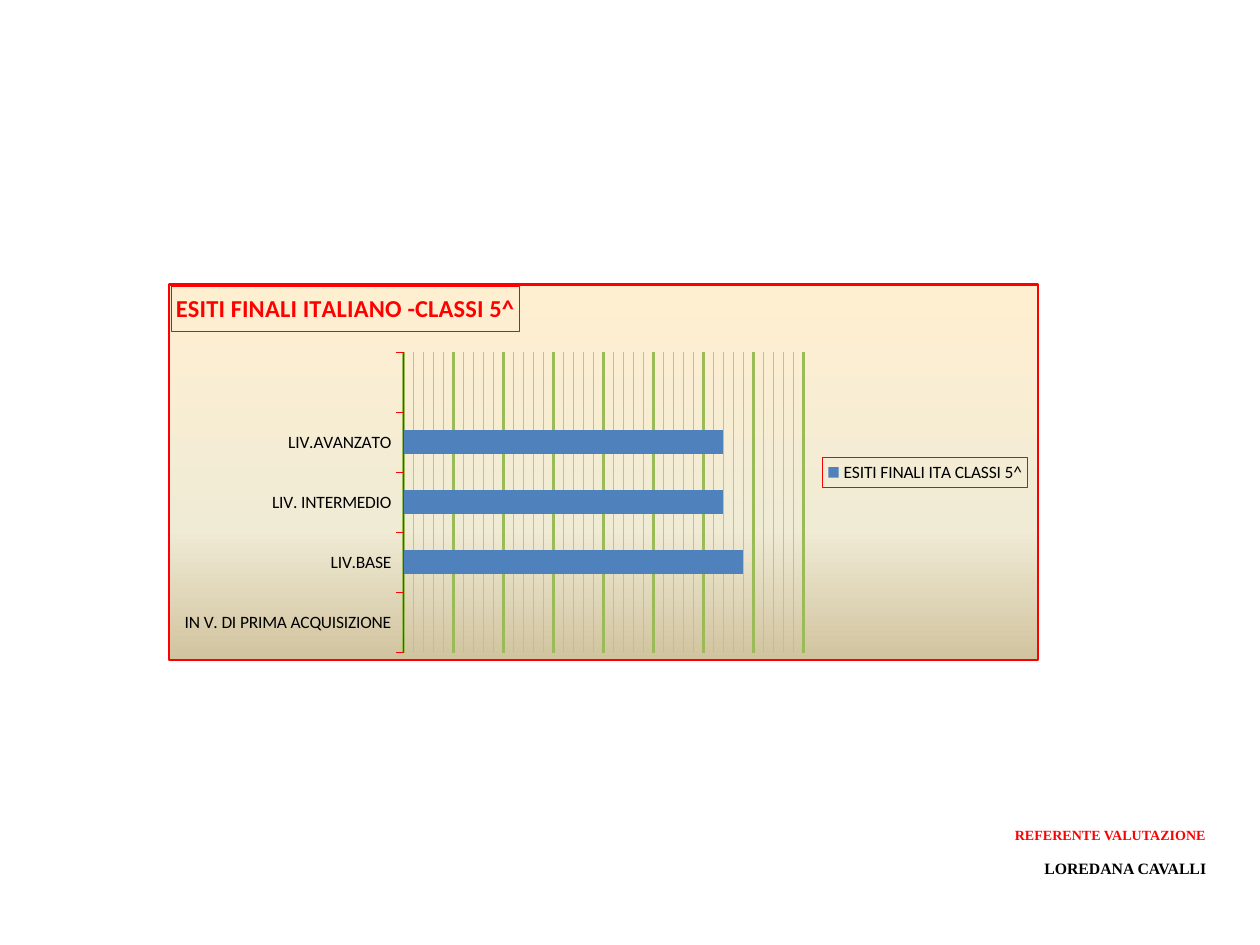
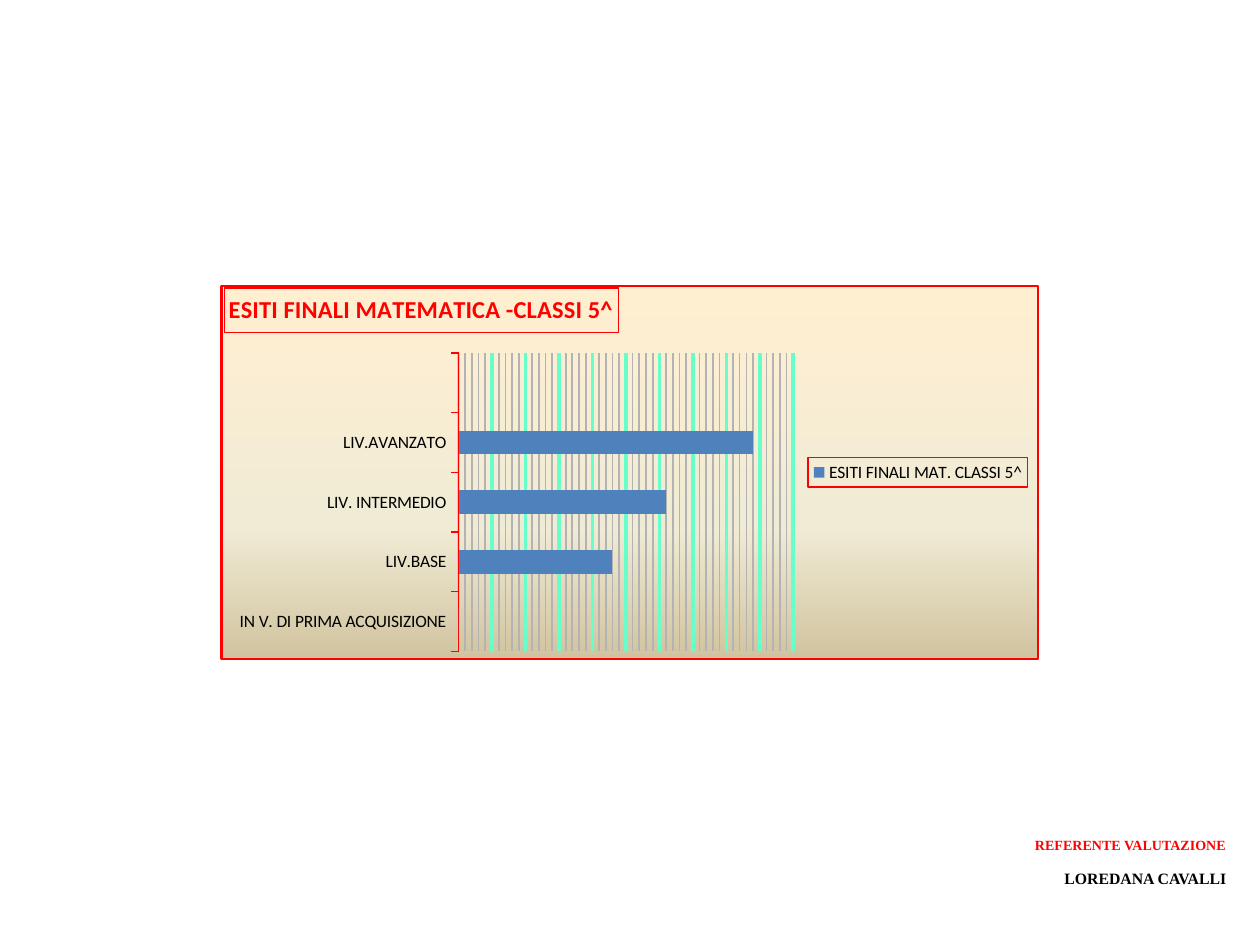
from dataclasses import dataclass
from lxml import etree
from pptx import Presentation
from pptx.chart.data import CategoryChartData
from pptx.dml.color import RGBColor
from pptx.enum.chart import XL_CHART_TYPE, XL_LEGEND_POSITION, XL_TICK_MARK
from pptx.enum.text import MSO_AUTO_SIZE, PP_ALIGN
from pptx.oxml import parse_xml
from pptx.oxml.ns import nsdecls, qn
from pptx.util import Inches, Pt


@dataclass(frozen=True)
class Theme:
    red: str = "FF0000"
    black: str = "000000"
    bar: str = "4F81BD"
    panel_stops: tuple = ((0, "FFEFD1"), (65, "F0EBD5"), (100, "D1C39F"))
    chart_font: str = "Calibri"
    footer_font: str = "Times New Roman"
    title_size: int = 14
    label_size: int = 10
    role_size: int = 8
    name_size: int = 9


THEME = Theme()
LEVELS = ["IN V. DI PRIMA ACQUISIZIONE", "LIV.BASE", "LIV. INTERMEDIO", "LIV.AVANZATO", ""]
FOOTER = [
    ("REFERENTE VALUTAZIONE", THEME.role_size, THEME.red),
    ("LOREDANA CAVALLI", THEME.name_size, THEME.black),
]
RESULTS = [
    dict(title="ESITI FINALI ITALIANO -CLASSI 5^", series="ESITI FINALI ITA CLASSI 5^",
         values=[0, 34, 32, 32, None], top=40, major="9BBB59", minor="C4BD97", minor_width=0.5,
         chart_at=(1.33, 2.25, 6.92, 3), plot_at=(0.27, 0.18, 0.46, 0.8),
         footer_at=(4.67, 6.5, 5, 0.52)),
    dict(title="ESITI FINALI MATEMATICA -CLASSI 5^", series="ESITI FINALI MAT. CLASSI 5^",
         values=[0, 23, 31, 44, None], top=50, major="66FFCC", minor="B3B3B3", minor_width=1,
         chart_at=(1.75, 2.26, 6.5, 2.98), plot_at=(0.29, 0.18, 0.41, 0.8),
         footer_at=(4.83, 6.58, 5, 0.52)),
]


def outline(color, width, fill=""):
    """Shape properties for chart parts that python-pptx cannot format."""
    return parse_xml(
        f'<c:spPr {nsdecls("c", "a")}>{fill}<a:ln w="{Pt(width)}"><a:solidFill>'
        f'<a:srgbClr val="{color}"/></a:solidFill></a:ln></c:spPr>')


def place(part, index, **settings):
    """Give a chart part a manual layout, in fractions of the chart."""
    for old in part.findall(qn("c:layout")):
        part.remove(old)
    layout = etree.Element(qn("c:layout"))
    manual = etree.SubElement(layout, qn("c:manualLayout"))
    for key, value in settings.items():
        etree.SubElement(manual, qn(f"c:{key}")).set("val", str(value))
    part.insert(index, layout)


panel_stops = "".join(f'<a:gs pos="{pos * 1000}"><a:srgbClr val="{color}"/></a:gs>'
                      for pos, color in THEME.panel_stops)
panel_fill = (f'<a:gradFill><a:gsLst>{panel_stops}</a:gsLst>'
              '<a:lin ang="5400000" scaled="0"/></a:gradFill>')

prs = Presentation()
prs.slide_width, prs.slide_height = Inches(10), Inches(7.5)

for result in RESULTS:
    slide = prs.slides.add_slide(prs.slide_layouts[6])

    # Bar chart of the levels
    data = CategoryChartData()
    data.categories = LEVELS
    data.add_series(result["series"], result["values"])
    chart = slide.shapes.add_chart(
        XL_CHART_TYPE.BAR_CLUSTERED, *map(Inches, result["chart_at"]), data).chart
    chart.font.name = THEME.chart_font
    chart.font.size = Pt(THEME.label_size)
    chart.font.color.rgb = RGBColor.from_string(THEME.black)
    chart_root = chart.element.find(qn("c:chart"))

    bars = chart.plots[0]
    bars.gap_width = 150
    bars.vary_by_categories = False
    bars.series[0].format.fill.solid()
    bars.series[0].format.fill.fore_color.rgb = RGBColor.from_string(THEME.bar)

    # Framed title in the top left corner
    heading = chart.chart_title
    heading.text_frame.text = result["title"]
    heading_font = heading.text_frame.paragraphs[0].runs[0].font
    heading_font.name = THEME.chart_font
    heading_font.size = Pt(THEME.title_size)
    heading_font.bold = True
    heading_font.color.rgb = RGBColor.from_string(THEME.red)
    heading.format.line.color.rgb = RGBColor.from_string(THEME.red)
    heading.format.line.width = Pt(0.75)
    place(chart_root.find(qn("c:title")), 1, xMode="edge", yMode="edge", x=0.003, y=0.005)

    # Axes and gridlines
    levels_axis, score_axis = chart.category_axis, chart.value_axis
    levels_axis.major_tick_mark = XL_TICK_MARK.OUTSIDE
    levels_axis.format.line.color.rgb = RGBColor.from_string(THEME.red)
    levels_axis.format.line.width = Pt(0.75)
    score_axis.visible = False
    score_axis.minimum_scale, score_axis.maximum_scale = 0, result["top"]
    score_axis.major_unit, score_axis.minor_unit = 5, 1
    score_axis.has_major_gridlines = score_axis.has_minor_gridlines = True
    major_line = score_axis.major_gridlines.format.line
    major_line.color.rgb = RGBColor.from_string(result["major"])
    major_line.width = Pt(2)
    plot_area = chart_root.find(qn("c:plotArea"))
    minor_gridlines = plot_area.find(qn("c:valAx")).find(qn("c:minorGridlines"))
    minor_gridlines.append(outline(result["minor"], result["minor_width"]))
    x, y, w, h = result["plot_at"]
    place(plot_area, 0, layoutTarget="inner", xMode="edge", yMode="edge", x=x, y=y, w=w, h=h)

    # Framed legend
    chart.has_legend = True
    chart.legend.position = XL_LEGEND_POSITION.RIGHT
    chart.legend.include_in_layout = False
    legend_overlay = chart_root.find(qn("c:legend")).find(qn("c:overlay"))
    legend_overlay.addnext(outline(THEME.red, 0.75))

    # Gradient panel with a red border
    chart_root.addnext(outline(THEME.red, 1.5, panel_fill))

    # Signature at the bottom right
    signature = slide.shapes.add_textbox(*map(Inches, result["footer_at"])).text_frame
    signature.word_wrap = True
    signature.auto_size = MSO_AUTO_SIZE.SHAPE_TO_FIT_TEXT
    signature.text = "\n".join(text for text, _, _ in FOOTER)
    for paragraph, (_, size, color) in zip(signature.paragraphs, FOOTER):
        paragraph.alignment = PP_ALIGN.RIGHT
        paragraph.line_spacing = 1.07
        paragraph.space_after = Pt(8)
        font = paragraph.runs[0].font
        font.name, font.size, font.bold = THEME.footer_font, Pt(size), True
        font.color.rgb = RGBColor.from_string(color)

prs.save("out.pptx")
